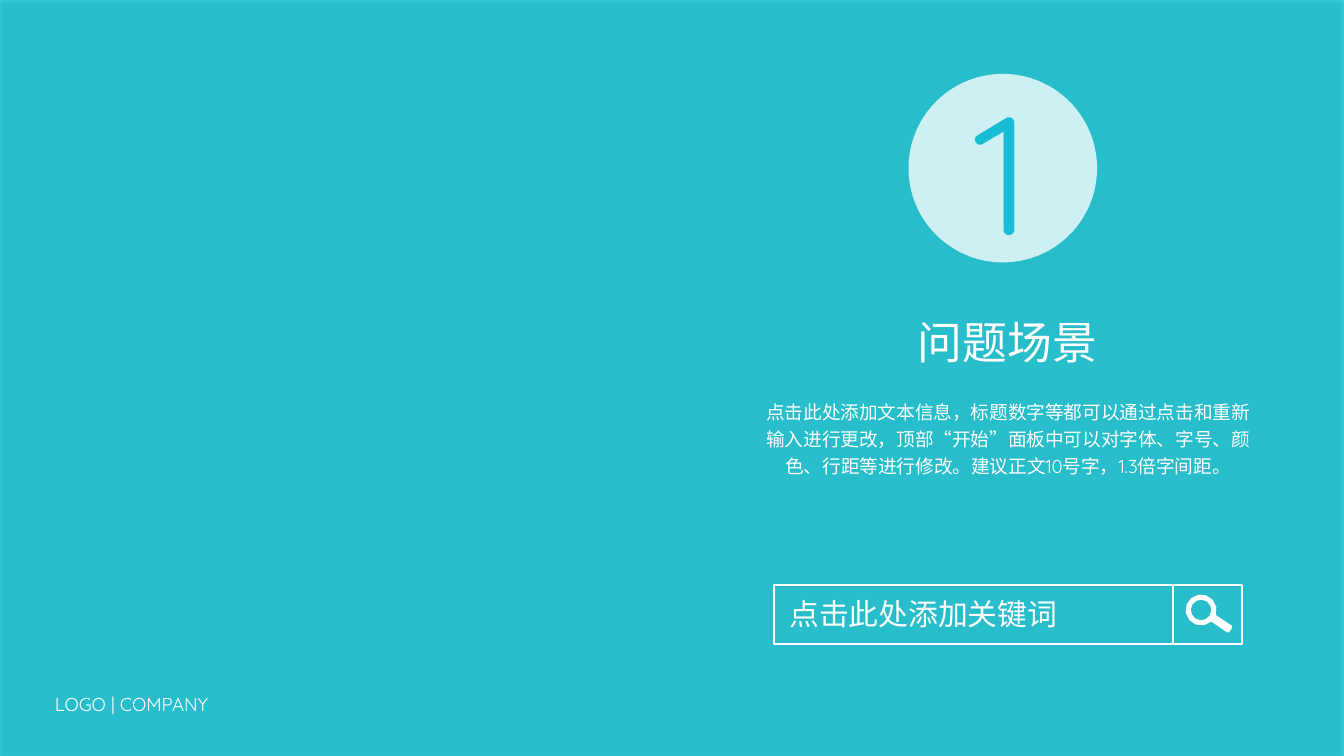
from dataclasses import dataclass
from math import cos, radians, sin

from lxml.etree import SubElement
from pptx import Presentation
from pptx.dml.color import RGBColor as Color
from pptx.enum.lang import MSO_LANGUAGE_ID as Lang
from pptx.enum.shapes import MSO_CONNECTOR as Link, MSO_SHAPE as Form
from pptx.enum.text import MSO_ANCHOR as Anchor, MSO_AUTO_SIZE as Fit, PP_ALIGN as Align
from pptx.oxml.ns import qn
from pptx.util import Pt


@dataclass(frozen=True)
class Theme:
    teal: str = "00C8D9"
    blue: str = "18BDD5"
    white: str = "FFFFFF"
    black: str = "000000"
    head: str = "Roboto"
    body: str = "Quicksand"
    small: int = 10
    label: int = 16
    title: int = 24
    huge: int = 90


THEME = Theme()
WIDE, HIGH = 720, 405


def points(*nums):
    return [Pt(n) for n in nums]


def paint(shape, tone, alpha=100):
    """Fill a shape, with no line and no shadow."""
    shape.shadow.inherit = False
    shape.line.fill.background()
    shape.fill.solid()
    shape.fill.fore_color.rgb = Color.from_string(tone)
    if alpha < 100:
        node = shape.fill._xPr.find(qn("a:solidFill"))[0]
        SubElement(node, qn("a:alpha"), val=str(alpha * 1000))


def cast(shape, blur, dist, angle, alpha):
    """Give a shape an outer shadow."""
    group = shape._element.spPr.find(qn("a:effectLst"))
    drop = SubElement(group, qn("a:outerShdw"), blurRad=str(Pt(blur)),
                      dist=str(Pt(dist)), dir=str(angle * 60000),
                      algn="t", rotWithShape="0")
    tone = SubElement(drop, qn("a:srgbClr"), val=THEME.black)
    SubElement(tone, qn("a:alpha"), val=str(alpha * 1000))


def write(shape, text, size, font, tone=THEME.white, align=Align.LEFT,
          wrap=True, space=1.0, anchor=Anchor.TOP, fit=Fit.SHAPE_TO_FIT_TEXT):
    frame = shape.text_frame
    frame.word_wrap = wrap
    frame.auto_size = fit
    frame.vertical_anchor = anchor
    para = frame.paragraphs[0]
    para.alignment = align
    para.line_spacing = space
    run = para.add_run()
    run.text = text
    run.font.size = Pt(size)
    run.font.name = font
    run.font.color.rgb = Color.from_string(tone)
    run.font.language_id = Lang.SIMPLIFIED_CHINESE


def add_text(shapes, box, text, size, font, **style):
    write(shapes.add_textbox(*points(*box)), text, size, font, **style)


def stroke(shape):
    shape.line.color.rgb = Color.from_string(THEME.white)
    shape.line.width = Pt(1)


def trace(shapes, left, top, *loops):
    """Freeform from closed loops of points, kept to 0.01 pt."""
    fine = [[(x * 100, y * 100) for x, y in loop] for loop in loops]
    pen = shapes.build_freeform(*fine[0][0], scale=Pt(1) / 100)
    pen.add_line_segments(fine[0][1:])
    for loop in fine[1:]:
        pen.move_to(*loop[0])
        pen.add_line_segments(loop[1:])
    return pen.convert_to_shape(*points(left, top))


def set_title(shapes, text, left, top, wide, high):
    """Title placeholder with a free outline of its own."""
    title = shapes.title
    title.left, title.top, title.width, title.height = points(
        left, top, wide, high)
    form = trace(shapes, left, top,
                 [(0, 0), (wide, 0), (wide, high), (0, high)])
    title._element.spPr.append(form._element.spPr.find(qn("a:custGeom")))
    shapes._spTree.remove(form._element)
    write(title, text, THEME.title, THEME.head,
          align=Align.CENTER, wrap=False)


def arc(mid, size, start, end, step=30):
    return [(mid + size * cos(radians(a)), mid + size * sin(radians(a)))
            for a in range(start, end + 1, step)]


def add_lens(shapes, left, top):
    """Magnifier: a ring with a handle to the right, then turned."""
    ring, hole, reach, half = 8.3, 5.5, 27.4, 2.2
    grip = [(reach - 0.7, ring - half), (reach, ring - half + 0.7),
            (reach, ring + half - 0.7), (reach - 0.7, ring + half)]
    rim = arc(ring, ring, 15, 345) + grip[::-1]
    rim = arc(ring, ring, 15, 345) + grip
    lens = trace(shapes, left, top, rim, arc(ring, hole, 0, 360))
    paint(lens, THEME.white)
    lens.rotation = 33.9


def add_search(slide):
    shapes = slide.shapes.add_group_shape().shapes
    left, top, wide, high = 414.7, 313.6, 250.6, 31.7
    frame = shapes.add_shape(Form.RECTANGLE, *points(left, top, wide, high))
    frame.shadow.inherit = False
    frame.fill.background()
    stroke(frame)
    add_text(shapes, (415.8, 315.4, 172, 26.6), "点击此处添加关键词",
             THEME.label, THEME.head)
    split = left + 213.8
    rule = shapes.add_connector(
        Link.STRAIGHT, *points(split, top + high, split, top))
    SubElement(rule._element.spPr, qn("a:effectLst"))
    stroke(rule)
    add_lens(shapes, 634.2, 321.6)


def main():
    deck = Presentation()
    deck.slide_width, deck.slide_height = points(WIDE, HIGH)
    slide = deck.slides.add_slide(deck.slide_layouts[5])
    shapes = slide.shapes

    # Teal panel, behind everything
    panel = shapes.add_shape(Form.RECTANGLE, *points(0, 0, WIDE, HIGH))
    paint(panel, THEME.teal, 75)
    cast(panel, 2, 1, 90, 50)
    shapes._spTree.insert(2, panel._element)

    # Section title
    set_title(shapes, "问题场景", 484, 164.9, 111.6, 36)

    # Search bar
    add_search(slide)

    # Description
    add_text(shapes, (400, 208.8, 280, 50.4),
             "点击此处添加文本信息，标题数字等都可以通过点击和重新输入进行更改，"
             "顶部“开始”面板中可以对字体、字号、颜色、行距等进行修改。"
             "建议正文10号字，1.3倍字间距。",
             THEME.small, THEME.body, align=Align.CENTER, space=1.2)

    # Section number
    badge = shapes.add_shape(Form.OVAL, *points(486.7, 39.6, 101, 101))
    paint(badge, THEME.white, 78)
    write(badge, "1", THEME.huge, THEME.body, tone=THEME.blue,
          align=Align.CENTER, anchor=Anchor.MIDDLE, fit=Fit.NONE)

    # Footer
    add_text(shapes, (22.3, 367.5, 110.2, 19.4), "LOGO | COMPANY",
             THEME.small, THEME.body, wrap=False)

    deck.save("out.pptx")


if __name__ == "__main__":
    main()
